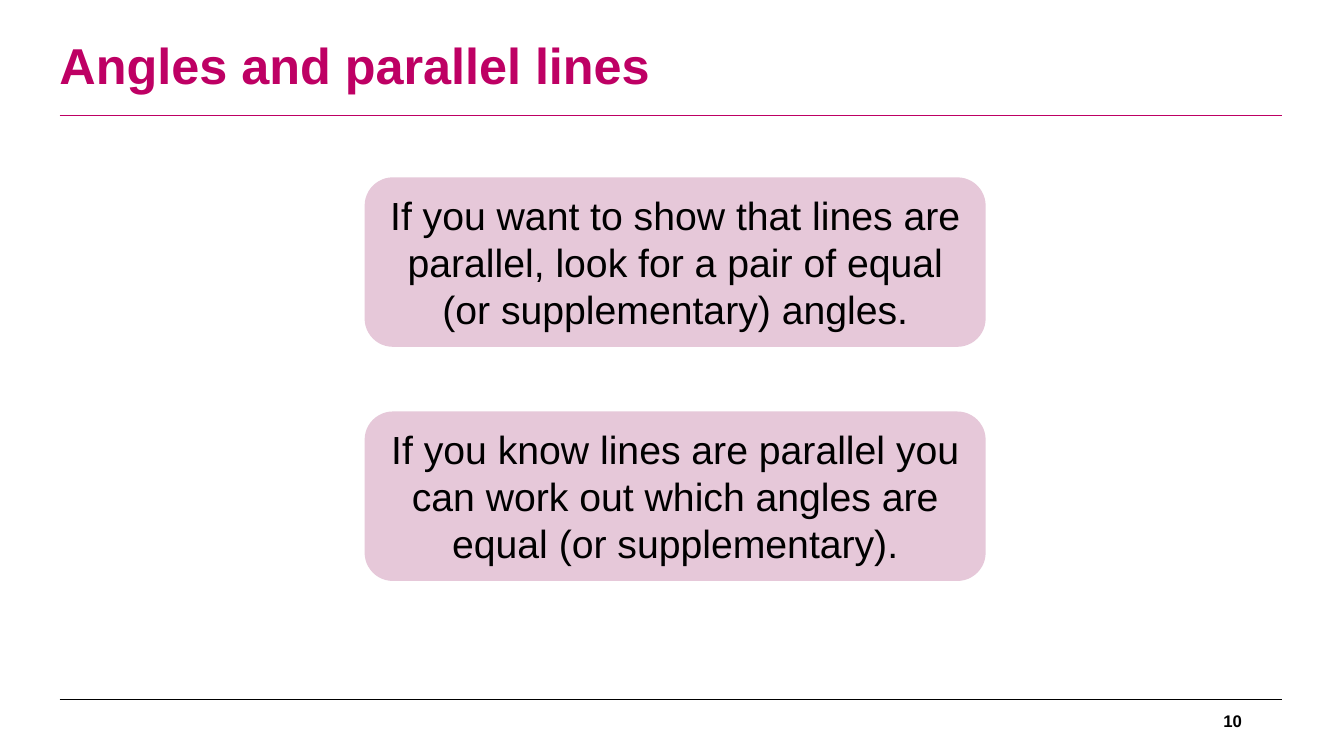
from lxml.etree import SubElement
from pptx import Presentation
from pptx.dml.color import RGBColor
from pptx.enum.shapes import MSO_CONNECTOR, MSO_SHAPE
from pptx.enum.text import MSO_ANCHOR as ANCHOR, PP_ALIGN as ALIGN
from pptx.oxml.ns import qn
from pptx.util import Cm, Pt

# Content
TITLE = "Angles and parallel lines"
PAGE_NUMBER = "10"
STATEMENTS = [
    "If you want to show that lines are parallel, look for a pair of equal "
    "(or supplementary) angles.",
    "If you know lines are parallel you can work out which angles are "
    "equal (or supplementary).",
]

# Style
FONT = "Arial"
MAGENTA = RGBColor(0xBE, 0x00, 0x64)
PINK = RGBColor(0xE6, 0xC8, 0xD9)
BLACK = RGBColor(0, 0, 0)

# Layout, in centimetres
RULE_LEFT, RULE_RIGHT = 1.5, 32.3
RULES = [(2.9, MAGENTA), (17.63, BLACK)]
BOX_LEFT, BOX_TOP, BOX_WIDTH, BOX_HEIGHT = 9.19, 4.47, 15.65, 4.27
BOX_PITCH = 5.9


def write(shape, text, size, color, align, bold=False):
    tf = shape.text_frame
    tf.word_wrap = True
    tf.vertical_anchor = ANCHOR.MIDDLE
    tf.text = text
    p = tf.paragraphs[0]
    p.alignment = align
    font = p.runs[0].font
    font.name, font.size, font.bold = FONT, Pt(size), bold
    font.color.rgb = color
    return p


prs = Presentation()
prs.slide_width, prs.slide_height = Cm(33.87), Cm(19.05)
s = prs.slides.add_slide(prs.slide_layouts[6])

# Rules under the title and above the footer
for y, color in RULES:
    rule = s.shapes.add_connector(
        MSO_CONNECTOR.STRAIGHT, Cm(RULE_LEFT), Cm(y), Cm(RULE_RIGHT), Cm(y))
    rule.line.color.rgb = color
    rule.line.width = Pt(0.75)
    SubElement(rule._element.spPr, qn("a:effectLst"))

# Title and page number
title = s.shapes.add_textbox(Cm(1.25), Cm(0.3), Cm(25.4), Cm(2.82))
p = write(title, TITLE, 36, MAGENTA, ALIGN.LEFT, bold=True)
p.line_spacing = 0.9
number = s.shapes.add_textbox(Cm(23.93), Cm(17.65), Cm(7.62), Cm(1.02))
write(number, PAGE_NUMBER, 12, BLACK, ALIGN.RIGHT, bold=True)

# Statement boxes
for i, statement in enumerate(STATEMENTS):
    box = s.shapes.add_shape(
        MSO_SHAPE.ROUNDED_RECTANGLE, Cm(BOX_LEFT), Cm(BOX_TOP + i * BOX_PITCH),
        Cm(BOX_WIDTH), Cm(BOX_HEIGHT))
    box.shadow.inherit = False
    box.fill.solid()
    box.fill.fore_color.rgb = PINK
    box.line.fill.background()
    write(box, statement, 28, BLACK, ALIGN.CENTER)

prs.save("out.pptx")
